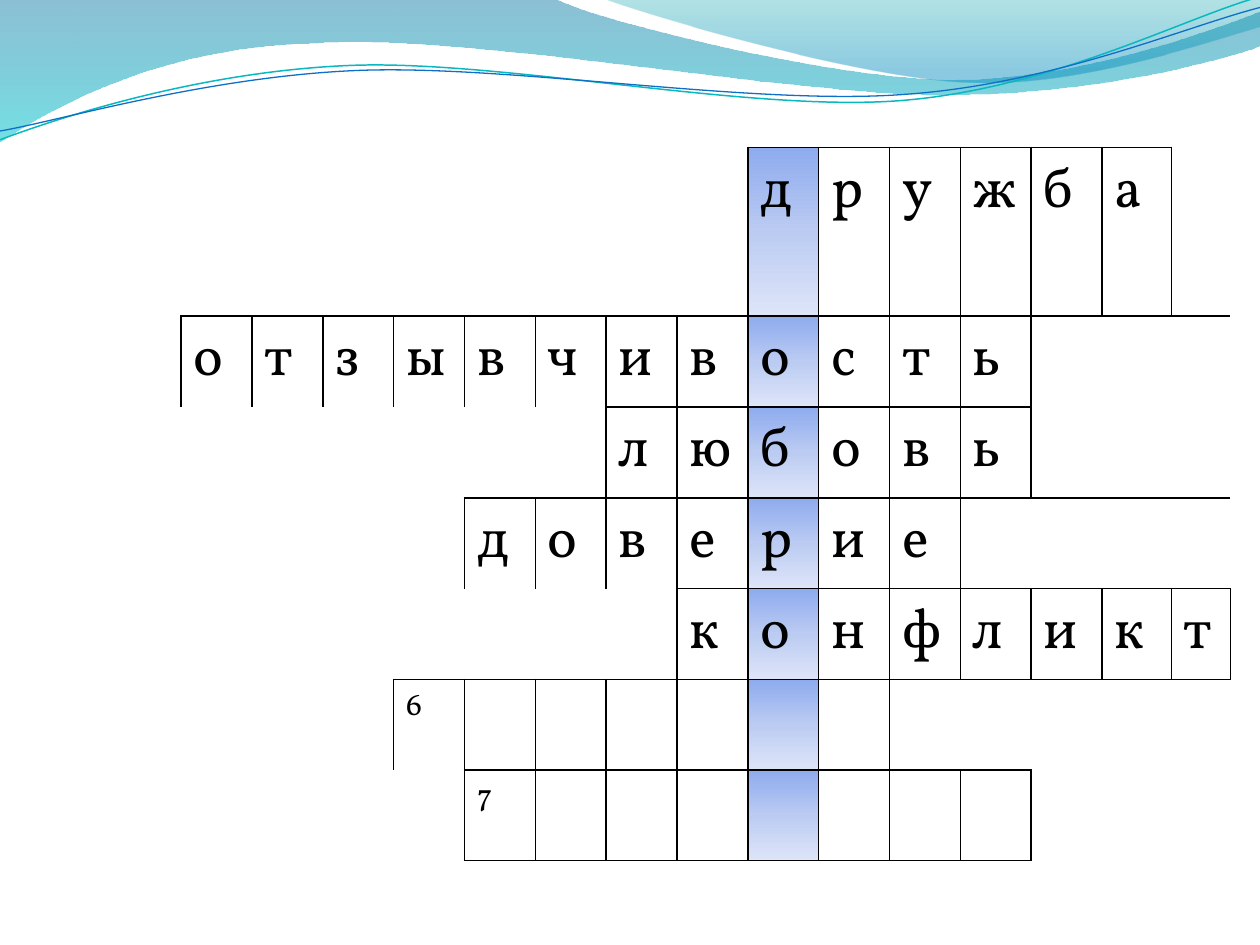
import math

from lxml import etree
from pptx import Presentation
from pptx import util as u
from pptx.dml.color import RGBColor
from pptx.oxml import ns, parse_xml

NS = ns.nsdecls("a")
COLUMNS = [9 / 8] + [9 / 16] * 13 + [0.55, 0.47]
ROWS = [1.34] + [0.72] * 6
KEY_COLUMN = 9
KEY_STOPS = [(0, "8EABEE", 100), (50, "BBCBF2", 100), (100, "DEE5F8", 100)]

# Each answer: first column, then one entry per square
ANSWERS = [
    (9, "дружба"),
    (1, "отзывчивость"),
    (7, "любовь"),
    (5, "доверие"),
    (8, "конфликт"),
    (4, ["6"] + [""] * 6),
    (5, ["7"] + [""] * 7),
]
# Blank areas: first row, first column, last row, last column, ruled sides
BLANKS = [
    (0, 0, 0, 8, "R"), (0, 15, 0, 15, "L"),
    (1, 0, 1, 0, "R"), (1, 13, 2, 15, "LT"),
    (2, 0, 2, 6, "R"),
    (3, 0, 3, 4, "R"), (3, 12, 3, 15, "LTB"),
    (4, 0, 4, 7, "R"),
    (5, 0, 5, 3, "R"), (5, 11, 5, 15, "LTB"),
    (6, 0, 6, 4, "R"), (6, 13, 6, 15, "L"),
]

# Waves: a start point, then segments of one (line) or three (curve) points
BAND = [[(0, 0)], [(4.4, -0.01)],
        [(4.76, 0.17), (6.64, 0.63), (7.58, 0.63)],
        [(8.53, 0.63), (9.58, 0.26), (10, 0.09)], [(10.01, 0.36)],
        [(9.83, 0.44), (8.7, 0.76), (7.46, 0.75)],
        [(6.22, 0.75), (3.82, 0.28), (2.57, 0.34)],
        [(1.29, 0.36), (0.46, 0.83), (-0.01, 1.13)]]
CREST = [[(4.79, -0.01)],
         [(5.09, 0.11), (6.82, 0.62), (7.69, 0.65)],
         [(8.56, 0.69), (9.61, 0.32), (10, 0.21)], [(10, 0)]]
TEAL_LINE = [[(0, 1.11)],
             [(0.48, 0.93), (1.58, 0.57), (2.77, 0.52)],
             [(3.95, 0.47), (5.93, 0.89), (7.13, 0.8)],
             [(8.33, 0.71), (9.38, 0.15), (9.98, -0.02)]]
BLUE_LINE = [[(0, 1.04)],
             [(0.47, 0.96), (1.64, 0.61), (2.83, 0.56)],
             [(4.03, 0.51), (5.97, 0.84), (7.17, 0.75)],
             [(8.36, 0.67), (9.41, 0.21), (10, 0.06)]]
LINE_TILT = -2.7


def color(value):
    return RGBColor.from_string(value)


def turn(point, degrees):
    x, y = point
    cos, sin = math.cos(math.radians(degrees)), math.sin(math.radians(degrees))
    return x * cos - y * sin, x * sin + y * cos


class Deck:
    font = "Vollkorn"
    ink = "000000"

    def __init__(self, width, height):
        self.prs = Presentation()
        self.prs.slide_width, self.prs.slide_height = u.Inches(width), u.Inches(height)
        self.slide = self.prs.slides.add_slide(self.prs.slide_layouts[6])

    def gradient(self, fill, properties, stops):
        """Fill from top to bottom; stops are position, colour, opacity."""
        fill.background()
        marks = "".join(
            f'<a:gs pos="{pos * 1000}"><a:srgbClr val="{rgb}">'
            f'<a:alpha val="{alpha * 1000}"/></a:srgbClr></a:gs>'
            for pos, rgb, alpha in stops)
        properties.replace(properties.find(ns.qn("a:noFill")), parse_xml(
            f'<a:gradFill {NS} rotWithShape="1"><a:gsLst>{marks}</a:gsLst>'
            '<a:lin ang="5400000" scaled="0"/></a:gradFill>'))

    def freeform(self, outline, closed, tilt=0):
        """Draw the outline level, bend its curves, then tilt it into place."""
        points = [tuple(u.Inches(v) for v in turn(point, -tilt))
                  for segment in outline for point in segment]
        builder = self.slide.shapes.build_freeform(*points[0], scale=1.0)
        builder.add_line_segments(points[1:], close=closed)
        shape = builder.convert_to_shape()
        shape.shadow.inherit = False

        lines = iter(list(shape._element.iter(ns.qn("a:lnTo"))))
        for segment in outline[1:]:
            steps = [next(lines) for _ in segment]
            if len(steps) == 3:
                bend = etree.Element(ns.qn("a:cubicBezTo"))
                steps[0].addprevious(bend)
                for step in steps:
                    bend.append(step[0])
                    step.getparent().remove(step)

        center = shape.left + shape.width / 2, shape.top + shape.height / 2
        x, y = turn(center, tilt)
        shape.left = u.Emu(round(x - shape.width / 2))
        shape.top = u.Emu(round(y - shape.height / 2))
        shape.rotation = tilt
        return shape

    def wave(self, outline, stops):
        shape = self.freeform(outline, True)
        shape.line.fill.background()
        self.gradient(shape.fill, shape._element.spPr, stops)

    def curve(self, outline, rgb, width):
        shape = self.freeform(outline, False, LINE_TILT)
        shape.fill.background()
        shape.line.color.rgb = color(rgb)
        shape.line.width = u.Pt(width)

    def table(self, left, top, columns, rows):
        table = self.slide.shapes.add_table(
            len(rows), len(columns), u.Inches(left), u.Inches(top),
            u.Inches(sum(columns)), u.Inches(sum(rows))).table
        table.first_row = table.horz_banding = False
        for column, width in zip(table.columns, columns):
            column.width = u.Inches(width)
        for row, height in zip(table.rows, rows):
            row.height = u.Inches(height)
        return table

    def borders(self, cell, ruled):
        cell.fill.background()
        properties = cell._tc.get_or_add_tcPr()
        for index, side in enumerate("LRTB"):
            paint = (f'<a:solidFill><a:srgbClr val="{self.ink}"/></a:solidFill>'
                     if side in ruled else "<a:noFill/>")
            properties.insert(index, etree.fromstring(
                f'<a:ln{side} {NS} w="12700">{paint}</a:ln{side}>'))

    def square(self, cell, letter, highlighted):
        self.borders(cell, "LRTB")
        if highlighted:
            self.gradient(cell.fill, cell._tc.tcPr, KEY_STOPS)
        if letter:
            cell.text = letter
            font = cell.text_frame.paragraphs[0].font
            font.name = self.font
            font.size = u.Pt(18 if letter.isdigit() else 32)
            font.color.rgb = color(self.ink)

    def blank(self, table, top, left, bottom, right, ruled):
        for row in range(top, bottom + 1):
            for column in range(left, right + 1):
                on_edge = {"L": column == left, "R": column == right,
                           "T": row == top, "B": row == bottom}
                self.borders(table.cell(row, column),
                             [side for side in ruled if on_edge[side]])
        if (top, left) != (bottom, right):
            table.cell(top, left).merge(table.cell(bottom, right))


def main():
    deck = Deck(10, 7.5)

    # Waves along the top
    deck.wave(BAND, [(0, "0074A1", 45), (100, "00C6CF", 55)])
    deck.wave(CREST, [(0, "00A1A9", 30), (80, "008BBF", 45)])
    deck.curve(TEAL_LINE, "0AB8BF", 0.85)
    deck.curve(BLUE_LINE, "0F6FC6", 0.75)

    # Crossword
    crossword = deck.table(5 / 16, 1.17, COLUMNS, ROWS)
    for row, (start, letters) in enumerate(ANSWERS):
        for column, letter in enumerate(letters, start):
            deck.square(crossword.cell(row, column), letter, column == KEY_COLUMN)
    for area in BLANKS:
        deck.blank(crossword, *area)

    deck.prs.save("out.pptx")


if __name__ == "__main__":
    main()
